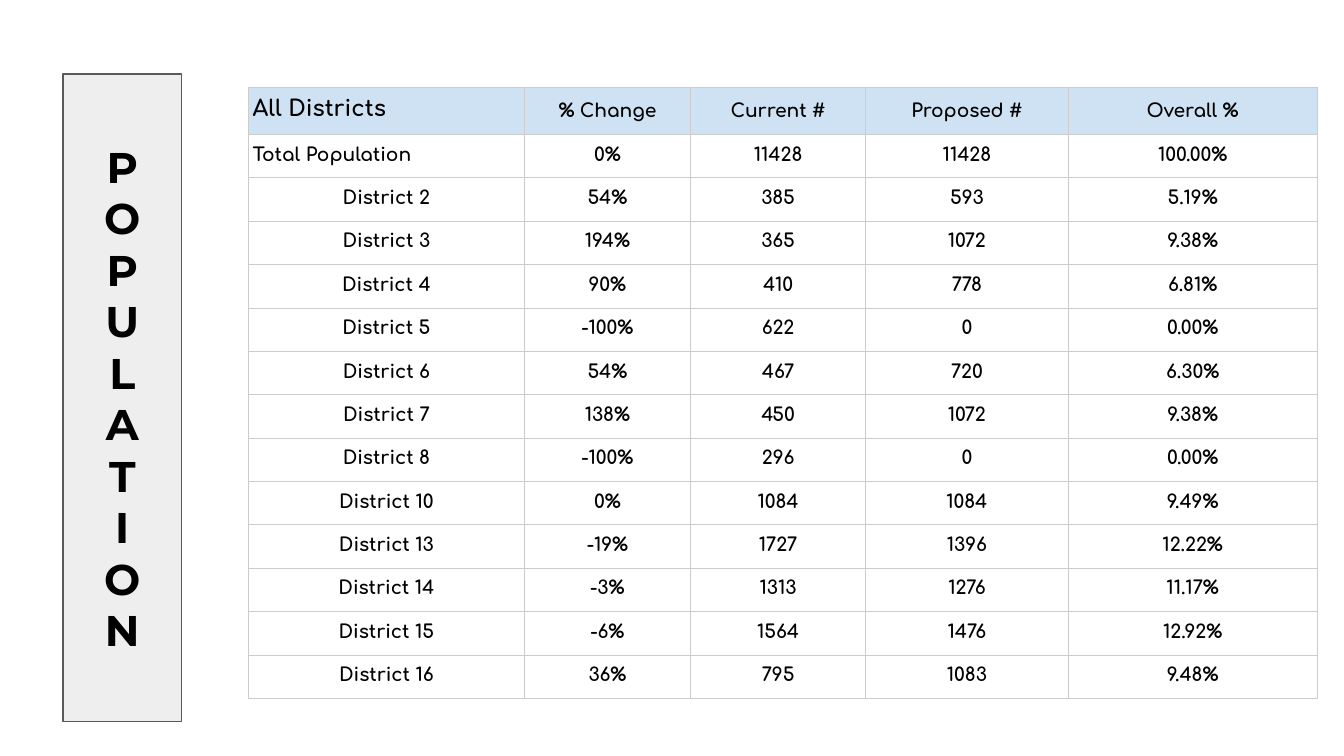
"""Build the population slide: a vertical title beside a table of districts."""
from lxml.etree import SubElement
from pptx import Presentation
from pptx.dml.color import RGBColor
from pptx.enum.text import MSO_ANCHOR, MSO_AUTO_SIZE, PP_ALIGN
from pptx.oxml.ns import qn
from pptx.util import Inches, Pt

TITLE = "POPULATION"
HEAD = ("All Districts", "% Change", "Current #", "Proposed #", "Overall %")
ROWS = [
    ("Total Population", "0%", "11428", "11428", "100.00%"),
    ("District 2", "54%", "385", "593", "5.19%"),
    ("District 3", "194%", "365", "1072", "9.38%"),
    ("District 4", "90%", "410", "778", "6.81%"),
    ("District 5", "-100%", "622", "0", "0.00%"),
    ("District 6", "54%", "467", "720", "6.30%"),
    ("District 7", "138%", "450", "1072", "9.38%"),
    ("District 8", "-100%", "296", "0", "0.00%"),
    ("District 10", "0%", "1084", "1084", "9.49%"),
    ("District 13", "-19%", "1727", "1396", "12.22%"),
    ("District 14", "-3%", "1313", "1276", "11.17%"),
    ("District 15", "-6%", "1564", "1476", "12.92%"),
    ("District 16", "36%", "795", "1083", "9.48%"),
]
WIDTHS = (2.05, 1.24, 1.3, 1.51, 1.85)
HEAD_H, ROW_H = 0.35, 0.32
THEME = {
    "ink": "000000", "panel": "EEEEEE", "edge": "595959",
    "head": "CFE2F3", "grid": "CCCCCC",
    "title_font": "Montserrat", "font": "Comfortaa",
    "title": 23, "lead": 12, "body": 10,
}


def color(name):
    return RGBColor.from_string(THEME[name])


def write(frame, text, size="body", font="font", align=PP_ALIGN.CENTER, space=None):
    frame.text = text
    for para in frame.paragraphs:
        para.alignment = align
        para.line_spacing = space
        para.font.size = Pt(THEME[size])
        para.font.name = THEME[font]
        para.font.bold = True
        para.font.color.rgb = color("ink")


def border(cell):
    props = cell._tc.get_or_add_tcPr()
    for spot, side in enumerate(("lnL", "lnR", "lnT", "lnB")):
        line = SubElement(props, qn(f"a:{side}"), w=str(Pt(0.5)))
        fill = SubElement(line, qn("a:solidFill"))
        SubElement(fill, qn("a:srgbClr"), val=THEME["grid"])
        props.insert(spot, line)


def add_title(slide):
    title = slide.shapes.title
    title.left, title.top = Inches(0.47), Inches(0.55)
    title.width, title.height = Inches(0.88), Inches(4.82)
    title.fill.solid()
    title.fill.fore_color.rgb = color("panel")
    title.line.color.rgb = color("edge")
    title.line.width = Pt(0.75)
    frame = title.text_frame
    frame.auto_size = MSO_AUTO_SIZE.NONE
    frame.word_wrap = True
    frame.vertical_anchor = MSO_ANCHOR.MIDDLE
    frame.margin_left = frame.margin_right = Inches(0.1)
    frame.margin_top = frame.margin_bottom = Inches(0.1)
    write(frame, "\n".join(TITLE), size="title", font="title_font")


def add_grid(slide):
    data = [HEAD, *ROWS]
    high = HEAD_H + ROW_H * len(ROWS)
    table = slide.shapes.add_table(
        len(data), len(HEAD), Inches(1.85), Inches(0.65),
        Inches(sum(WIDTHS)), Inches(high)).table
    table.horz_banding = False
    for col, width in zip(table.columns, WIDTHS):
        col.width = Inches(width)
    for r, line in enumerate(data):
        table.rows[r].height = Inches(ROW_H if r else HEAD_H)
        for c, text in enumerate(line):
            cell = table.cell(r, c)
            cell.vertical_anchor = MSO_ANCHOR.BOTTOM
            cell.margin_left = cell.margin_right = Inches(0.03)
            cell.margin_top = cell.margin_bottom = Inches(0.1)
            if r:
                cell.fill.background()
            else:
                cell.fill.solid()
                cell.fill.fore_color.rgb = color("head")
            border(cell)
            write(cell.text_frame, text, space=0.8,
                  size="lead" if r == c == 0 else "body",
                  align=PP_ALIGN.LEFT if c == 0 and r < 2 else PP_ALIGN.CENTER)


def main():
    deck = Presentation()
    deck.slide_width = Inches(10)
    deck.slide_height = deck.slide_width * 9 // 16
    slide = deck.slides.add_slide(deck.slide_layouts[5])
    add_title(slide)
    add_grid(slide)
    deck.save("out.pptx")


if __name__ == "__main__":
    main()
